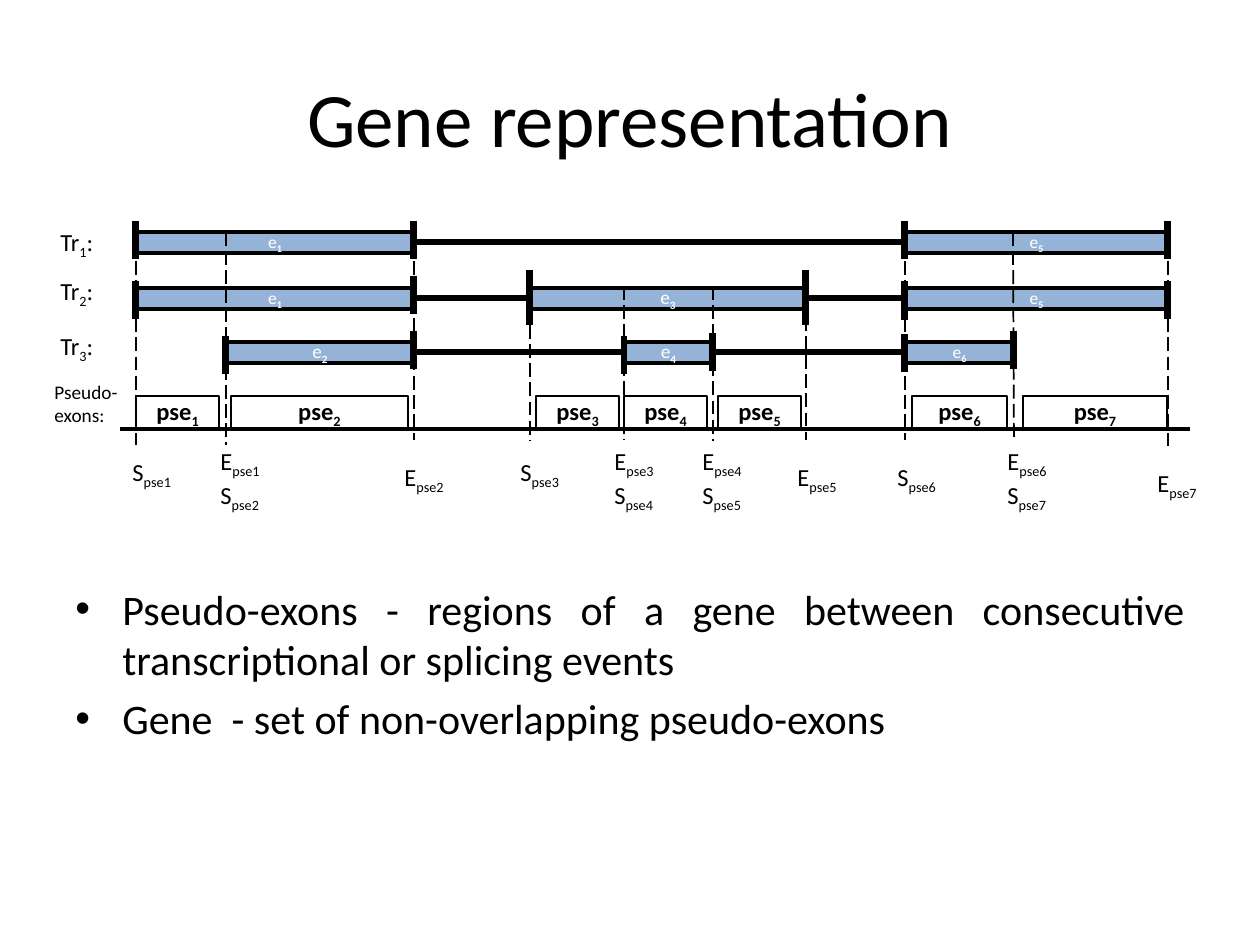
from lxml import etree
from pptx import Presentation
from pptx import util as u
from pptx.dml.color import RGBColor
from pptx.enum import dml, shapes, text
from pptx.oxml.ns import qn

PX = 914400 / 126
COLORS = {"ink": "000000", "exon": "95B3D7", "label": "FFFFFF"}
BOUNDS = [136, 226, 414, 530, 624, 713, 806, 905, 1014, 1168]
A, B, C, D, E, F, G, H, I, J = BOUNDS
ROWS = [242, 298, 352]

deck = Presentation()
deck.slide_width, deck.slide_height = u.Inches(10), u.Inches(7.5)
slide = deck.slides.add_slide(deck.slide_layouts[6])


def px(*lengths):
    return [u.Emu(round(length * PX)) for length in lengths]


def write(content, box=None, host=None, size=14, color="ink", bold=None, sub_bold=None,
          align="LEFT", anchor="TOP", wrap=True, grow=False, bullet=False):
    host = host or slide.shapes.add_textbox(*px(*box))
    frame = host.text_frame
    frame.word_wrap = wrap
    frame.vertical_anchor = text.MSO_ANCHOR[anchor]
    if grow:
        frame.auto_size = text.MSO_AUTO_SIZE.SHAPE_TO_FIT_TEXT
    for n, line in enumerate(content.split("\n")):
        paragraph = frame.paragraphs[0] if n == 0 else frame.add_paragraph()
        paragraph.alignment = text.PP_ALIGN[align]
        if bullet:
            paragraph.space_before = u.Pt(size * 0.2)
            props = paragraph._p.get_or_add_pPr()
            indent = px(47)[0]
            props.set("marL", str(indent))
            props.set("indent", str(-indent))
            etree.SubElement(props, qn("a:buFont"), typeface="Arial")
            etree.SubElement(props, qn("a:buChar"), char="•")
        for k, part in enumerate(line.split("|")):
            run = paragraph.add_run()
            run.text = part
            run.font.name, run.font.size = "Calibri", u.Pt(size)
            run.font.color.rgb = RGBColor.from_string(COLORS[color])
            run.font.bold = sub_bold if k % 2 and sub_bold else bold
            if k % 2:
                run.font._element.set("baseline", "-25000")


write("Gene representation", box=(63, 38, 1134, 158), size=44, align="CENTER", anchor="MIDDLE")

guides_behind = [(A, 242, A, 445), (D, 287, D, 440), (G, 298, G, 440),
                 (H, 242, H, 440), (J, 242, J, 446)]
guides_front = [(C, 242, C, 440), (F, 286, F, 441), (E, 286, E, 440),
                (B, 232, B, 445), (I - 1, 232, I, 440)]
introns = [(C, ROWS[0], H, ROWS[0]), (C, ROWS[1], D, ROWS[1]), (G, ROWS[1], H, ROWS[1]),
           (F, ROWS[2], H, ROWS[2]), (C, ROWS[2], E, ROWS[2])]
exon_ends = [(x, top, x, bottom) for x, top, bottom in [
    (A, 281, 319), (A, 221, 259), (C, 221, 259), (C, 276, 314), (C, 331, 369),
    (B, 336, 374), (D, 270, 325), (G, 270, 325), (E, 336, 374), (F, 333, 371),
    (H, 221, 259), (H, 281, 320), (H, 334, 372), (J, 221, 259), (J, 281, 319),
    (I, 331, 369)]]
exons = [("e|1", A, C, ROWS[1], 10), ("e|3", D, G, ROWS[1], 11), ("e|5", H, J, ROWS[1], 10),
         ("e|2", B, C, ROWS[2], 11), ("e|4", E, F, ROWS[2], 11), ("e|6", H, I, ROWS[2], 10),
         ("e|1", A, C, ROWS[0], 10), ("e|5", H, J, ROWS[0], 10)]
pseudo_exons = [(136, 83), (231, 177), (536, 83), (624, 83), (718, 83), (912, 95), (1023, 144)]

blocks = [(label, (left, row - 10, right - left, 21), "exon", 2,
           dict(size=size, color="label", sub_bold=True))
          for label, left, right, row, size in exons]
blocks += [(f"pse|{n}", (left, 396, width, 33), None, 1, dict(bold=True))
           for n, (left, width) in enumerate(pseudo_exons, 1)]

layers = [
    (guides_behind, 1, True, blocks[:6]),
    ([(120, 429, 1190, 429)], 2, False, blocks[6:8]),
    (guides_front, 1, True, []),
    (introns, 3, False, blocks[8:]),
    (exon_ends, 4, False, []),
]
for lines, weight, dashed, boxes in layers:
    for ends in lines:
        line = slide.shapes.add_connector(shapes.MSO_CONNECTOR.STRAIGHT, *px(*ends))
        line.line.color.rgb = RGBColor.from_string(COLORS["ink"])
        line.line.width = u.Pt(weight)
        if dashed:
            line.line.dash_style = dml.MSO_LINE.LONG_DASH
        etree.SubElement(line._element.spPr, qn("a:effectLst"))
    for label, box, fill, border, style in boxes:
        block = slide.shapes.add_shape(shapes.MSO_SHAPE.RECTANGLE, *px(*box))
        block.shadow.inherit = False
        if fill:
            block.fill.solid()
            block.fill.fore_color.rgb = RGBColor.from_string(COLORS[fill])
        else:
            block.fill.background()
        block.line.color.rgb = RGBColor.from_string(COLORS["ink"])
        block.line.width = u.Pt(border)
        write(label, host=block, align="CENTER", anchor="MIDDLE", **style)

for label, left, top in [
        ("S|pse1", 120, 451), ("E|pse1\nS|pse2", 208, 440), ("E|pse2", 392, 456),
        ("S|pse3", 508, 451), ("E|pse3\nS|pse4", 602, 440), ("E|pse4\nS|pse5", 690, 440),
        ("E|pse5", 785, 456), ("S|pse6", 885, 456), ("E|pse6\nS|pse7", 995, 440),
        ("E|pse7", 1145, 462)]:
    write(label, box=(left, top, 72, 74 if "\n" in label else 44), wrap=False, grow=True)

for n, top in enumerate([221, 270, 325], 1):
    write(f"Tr|{n}|:", box=(48, top, 63, 44), wrap=False, grow=True)
write("Pseudo-exons:", box=(42, 374, 100, 62), size=11, grow=True)

definitions = [("Pseudo-exons - regions of a gene between consecutive transcriptional or splicing events"),
               "Gene  - set of non-overlapping pseudo-exons"]
write("\n".join(definitions), box=(63, 577, 1134, 175), size=24, align="JUSTIFY", grow=True, bullet=True)

deck.save("out.pptx")
